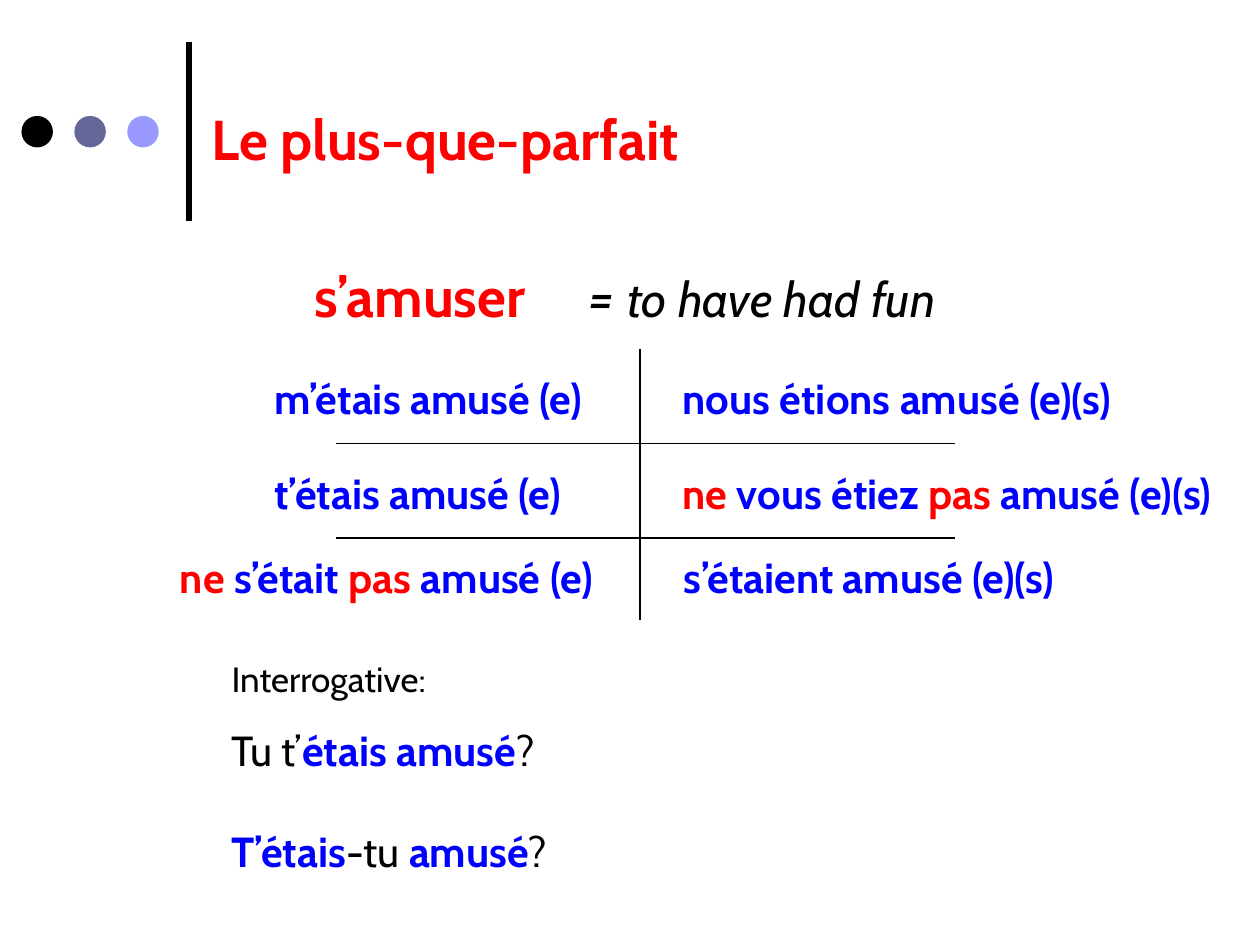
from lxml.etree import SubElement
from pptx import Presentation
from pptx.dml.color import RGBColor
from pptx.enum.shapes import MSO_CONNECTOR, MSO_SHAPE
from pptx.enum.text import MSO_AUTO_SIZE
from pptx.oxml.ns import qn
from pptx.util import Inches, Pt

BLACK = RGBColor(0x00, 0x00, 0x00)
SLATE = RGBColor(0x66, 0x66, 0x99)
LAVENDER = RGBColor(0x99, 0x99, 0xFF)
RED = RGBColor(0xFF, 0x00, 0x00)
BLUE = RGBColor(0x00, 0x00, 0xFF)

PLAIN = {"size": 24, "color": BLACK}
SMALL = PLAIN | {"size": 20}
VERB = {"size": 24, "color": BLUE, "bold": True}
NEGATION = VERB | {"color": RED}
HEADING = NEGATION | {"size": 32}
EQUALS = {"size": 32, "color": BLACK, "italic": True}
MEANING = EQUALS | {"size": 28}


class SlideBuilder:
    font_name = "Cabin"

    def __init__(self, page):
        self.page = page

    def line(self, start, end, width):
        connector = self.page.shapes.add_connector(
            MSO_CONNECTOR.STRAIGHT, *map(Inches, start + end))
        connector.line.color.rgb = BLACK
        connector.line.width = Pt(width)
        SubElement(connector._element.spPr, qn("a:effectLst"))

    def dot(self, left, top, size, color):
        dot = self.page.shapes.add_shape(
            MSO_SHAPE.OVAL, *map(Inches, (left, top, size, size)))
        dot.shadow.inherit = False
        dot.fill.solid()
        dot.fill.fore_color.rgb = color
        dot.line.fill.background()

    def text(self, left, top, width, height, *paragraphs):
        """Add a text box; each paragraph is (line spacing, [(text, format), ...])."""
        box = self.page.shapes.add_textbox(*map(Inches, (left, top, width, height)))
        frame = box.text_frame
        frame.word_wrap = True
        frame.auto_size = MSO_AUTO_SIZE.SHAPE_TO_FIT_TEXT
        for index, (spacing, spans) in enumerate(paragraphs):
            para = frame.add_paragraph() if index else frame.paragraphs[0]
            para.line_spacing = spacing
            for words, style in spans:
                self.span(para, words, style)

    def span(self, para, words, style):
        span = para.add_run()
        span.text = words
        span.font.name = self.font_name
        for name, value in style.items():
            if name == "color":
                span.font.color.rgb = value
            else:
                setattr(span.font, name, Pt(value) if name == "size" else value)


def main():
    deck = Presentation()
    deck.slide_width, deck.slide_height = Inches(10), Inches(7.5)
    builder = SlideBuilder(deck.slides.add_slide(deck.slide_layouts[6]))

    builder.line((1.5, 1.75), (1.5, 0.33), 3)
    for index, color in enumerate((BLACK, SLATE, LAVENDER)):
        builder.dot(0.17 + 0.42 * index, 0.92, 0.25, color)

    builder.text(1.58, 0.78, 8.17, 0.64, (1, [("Le plus-que-parfait", HEADING)]))
    builder.text(2.4, 2.03, 2.43, 0.64, (1, [("s’amuser", HEADING)]))
    builder.text(4.57, 2.03, 3.76, 0.64,
                 (1, [("= ", EQUALS), ("to have had fun", MEANING)]))

    builder.line((5.08, 2.77), (5.08, 4.92), 0.75)
    for rule_top in (3.52, 4.27):
        builder.line((2.67, rule_top), (7.58, rule_top), 0.75)

    conjugation = [
        (2.08, 2.91, 2.83, [("m’étais amusé (e)", VERB)]),
        (2.08, 3.66, 2.83, [("t’étais amusé (e)", VERB)]),
        (1.33, 4.33, 3.83, [("ne ", NEGATION), ("s’était ", VERB),
                            ("pas ", NEGATION), ("amusé (e)", VERB)]),
        (5.32, 2.91, 3.76, [("nous étions amusé (e)(s)", VERB)]),
        (5.32, 3.66, 4.6, [("ne ", NEGATION), ("vous étiez ", VERB),
                           ("pas ", NEGATION), ("amusé (e)(s)", VERB)]),
        (5.33, 4.33, 4, [("s’étaient amusé (e)(s)", VERB)]),
    ]
    for left, top, width, spans in conjugation:
        builder.text(left, top, width, 0.5, (1, spans))

    builder.text(
        1.74, 5.17, 7.1, 2.15,
        (1, [("Interrogative:", SMALL)]),
        (1.5, [("Tu t’", PLAIN), ("étais amusé", VERB), ("?", PLAIN)]),
        (2, [("T’étais", VERB), ("-tu ", PLAIN), ("amusé", VERB), ("?", PLAIN)]))

    deck.save("out.pptx")


if __name__ == "__main__":
    main()
